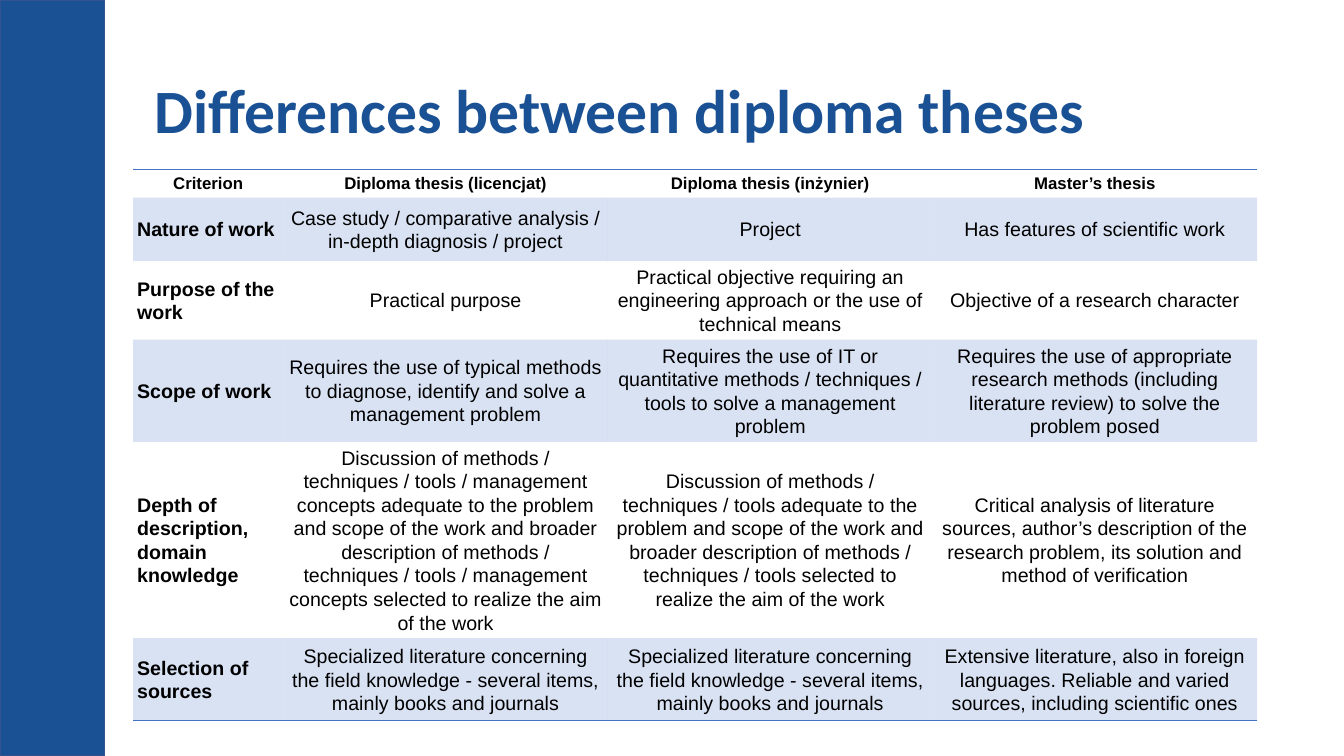
from lxml import etree
from pptx import Presentation
from pptx.dml.color import RGBColor
from pptx.enum import shapes, text
from pptx.oxml import ns
from pptx.util import Inches, Pt

COLOURS = {"navy": "1A5194", "edge": "31538F", "accent": "4472C4", "ink": "000000"}
COLUMN_WIDTHS = [1.49, 3.22, 3.22, 3.22]
ROW_HEIGHTS = [0.28, 0.63, 0.64, 1, 1.93, 0.82]
SOURCES = ("Specialized literature concerning the field knowledge - several items, "
           "mainly books and journals")
ROWS = [
    ["Criterion", "Diploma thesis (licencjat)", "Diploma thesis (inżynier)",
     "Master’s thesis"],
    ["Nature of work",
     "Case study / comparative analysis / in-depth diagnosis / project",
     "Project",
     "Has features of scientific work"],
    ["Purpose of the work",
     "Practical purpose",
     "Practical objective requiring an engineering approach or the use of "
     "technical means",
     "Objective of a research character"],
    ["Scope of work",
     "Requires the use of typical methods to diagnose, identify and solve a "
     "management problem",
     "Requires the use of IT or quantitative methods / techniques / tools to "
     "solve a management problem",
     "Requires the use of appropriate research methods (including literature "
     "review) to solve the problem posed"],
    ["Depth of description, domain knowledge",
     "Discussion of methods / techniques / tools / management concepts adequate "
     "to the problem and scope of the work and broader description of methods / "
     "techniques / tools / management concepts selected to realize the aim of "
     "the work",
     "Discussion of methods / techniques / tools adequate to the problem and "
     "scope of the work and broader description of methods / techniques / tools "
     "selected to realize the aim of the work",
     "Critical analysis of literature sources, author’s description of the "
     "research problem, its solution and method of verification"],
    ["Selection of sources", SOURCES, SOURCES,
     "Extensive literature, also in foreign languages. Reliable and varied "
     "sources, including scientific ones"],
]


def colour(name):
    return RGBColor.from_string(COLOURS[name])


def write(frame, words, font="Arial", size=14, ink="ink", bold=False,
          align=text.PP_ALIGN.CENTER, spacing=1.07):
    para = frame.paragraphs[0]
    para.alignment = align
    para.line_spacing = spacing
    span = para.add_run()
    span.text = words
    span.font.name = font
    span.font.size = Pt(size)
    span.font.bold = bold
    span.font.color.rgb = colour(ink)


def add_side_bar(page):
    bar = page.shapes.add_shape(shapes.MSO_SHAPE.RECTANGLE, 0, 0,
                                Inches(1.04), Inches(7.5))
    bar.shadow.inherit = False
    bar.fill.solid()
    bar.fill.fore_color.rgb = colour("navy")
    bar.line.color.rgb = colour("edge")
    bar.line.width = Pt(1)


def add_title(page, words):
    title = page.shapes.title
    title.left, title.top = Inches(1.43), Inches(0.4)
    title.width, title.height = Inches(11.5), Inches(1.45)
    frame = title.text_frame
    frame.auto_size = text.MSO_AUTO_SIZE.NONE
    frame.vertical_anchor = text.MSO_ANCHOR.MIDDLE
    write(frame, words, font="Calibri", size=44, ink="navy", bold=True,
          align=text.PP_ALIGN.LEFT, spacing=0.9)


def set_borders(cell, drawn):
    """Draw the borders named in drawn (such as "TB") and hide the others."""
    properties = cell._tc.get_or_add_tcPr()
    for index, side in enumerate("LRTB"):
        line = etree.Element(ns.qn(f"a:ln{side}"), w=str(Pt(1)))
        if side in drawn:
            fill = etree.SubElement(line, ns.qn("a:solidFill"))
            etree.SubElement(fill, ns.qn("a:srgbClr"), val=COLOURS["accent"])
        else:
            etree.SubElement(line, ns.qn("a:noFill"))
        properties.insert(index, line)


def tint(cell):
    """Fill the cell with the accent colour at 20 % opacity."""
    cell.fill.solid()
    cell.fill.fore_color.rgb = colour("accent")
    tone = cell._tc.tcPr.find(".//" + ns.qn("a:srgbClr"))
    etree.SubElement(tone, ns.qn("a:alpha"), val="20000")


def format_cell(cell, words, row, column):
    header = row == 0
    cell.margin_left = cell.margin_right = Inches(0.04)
    cell.margin_top = cell.margin_bottom = Inches(0.04)
    cell.vertical_anchor = text.MSO_ANCHOR.TOP if header else text.MSO_ANCHOR.MIDDLE
    if row % 2:
        tint(cell)
    else:
        cell.fill.background()
    set_borders(cell, "TB" if header else "B" if row == len(ROWS) - 1 else "")
    label = column == 0 and not header
    write(cell.text_frame, words, size=12 if header else 14, bold=header or label,
          align=text.PP_ALIGN.LEFT if label else text.PP_ALIGN.CENTER)


def add_comparison(page):
    table = page.shapes.add_table(
        len(ROWS), len(COLUMN_WIDTHS), Inches(1.32), Inches(1.68),
        Inches(sum(COLUMN_WIDTHS)), Inches(sum(ROW_HEIGHTS))).table
    table.first_row = table.horz_banding = False
    for column, width in zip(table.columns, COLUMN_WIDTHS):
        column.width = Inches(width)
    for row, height in zip(table.rows, ROW_HEIGHTS):
        row.height = Inches(height)
    for r, entries in enumerate(ROWS):
        for c, words in enumerate(entries):
            format_cell(table.cell(r, c), words, r, c)


def main():
    deck = Presentation()
    deck.slide_width, deck.slide_height = Inches(13.33), Inches(7.5)
    page = deck.slides.add_slide(deck.slide_layouts[5])
    add_side_bar(page)
    add_title(page, "Differences between diploma theses")
    add_comparison(page)
    deck.save("out.pptx")


if __name__ == "__main__":
    main()
